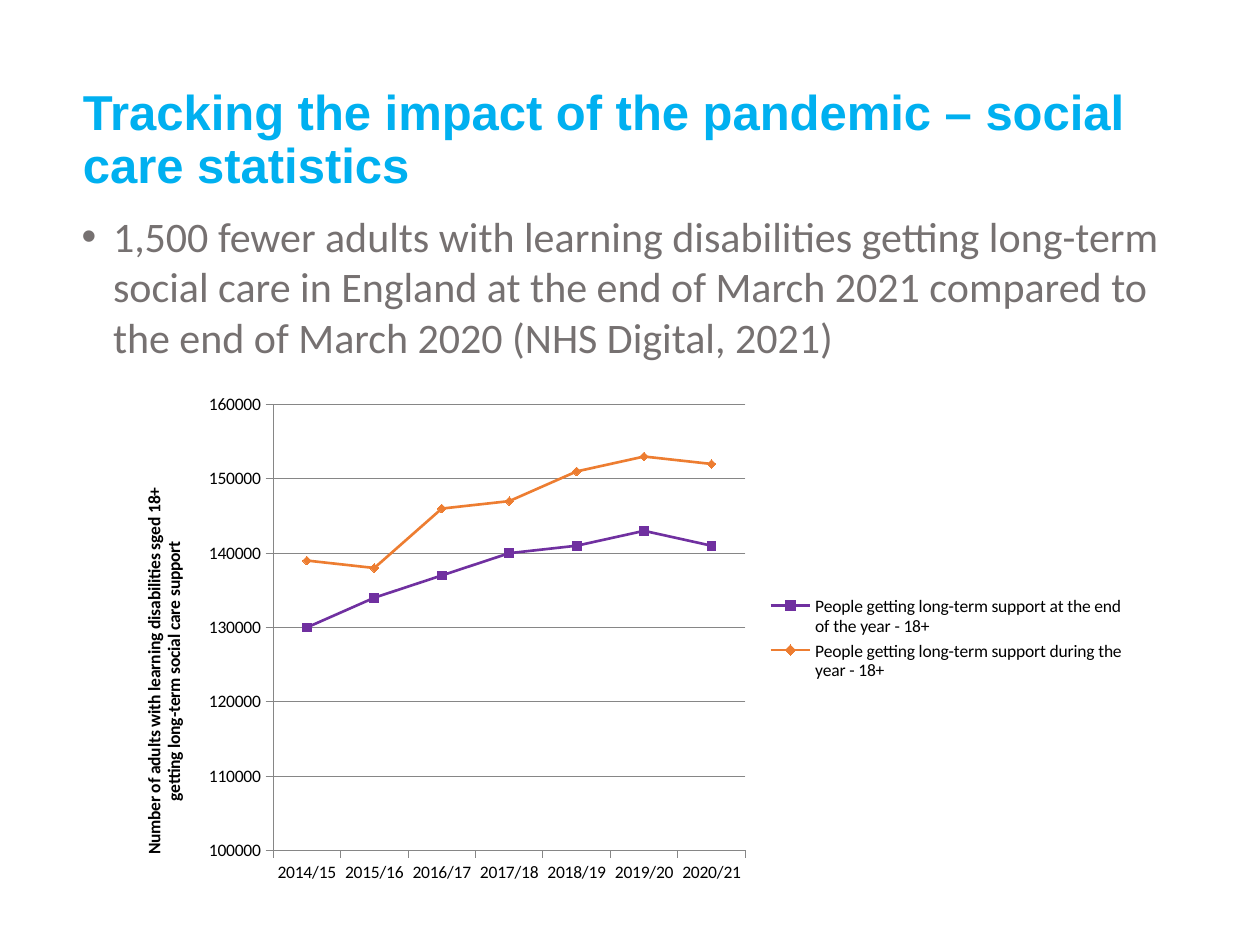
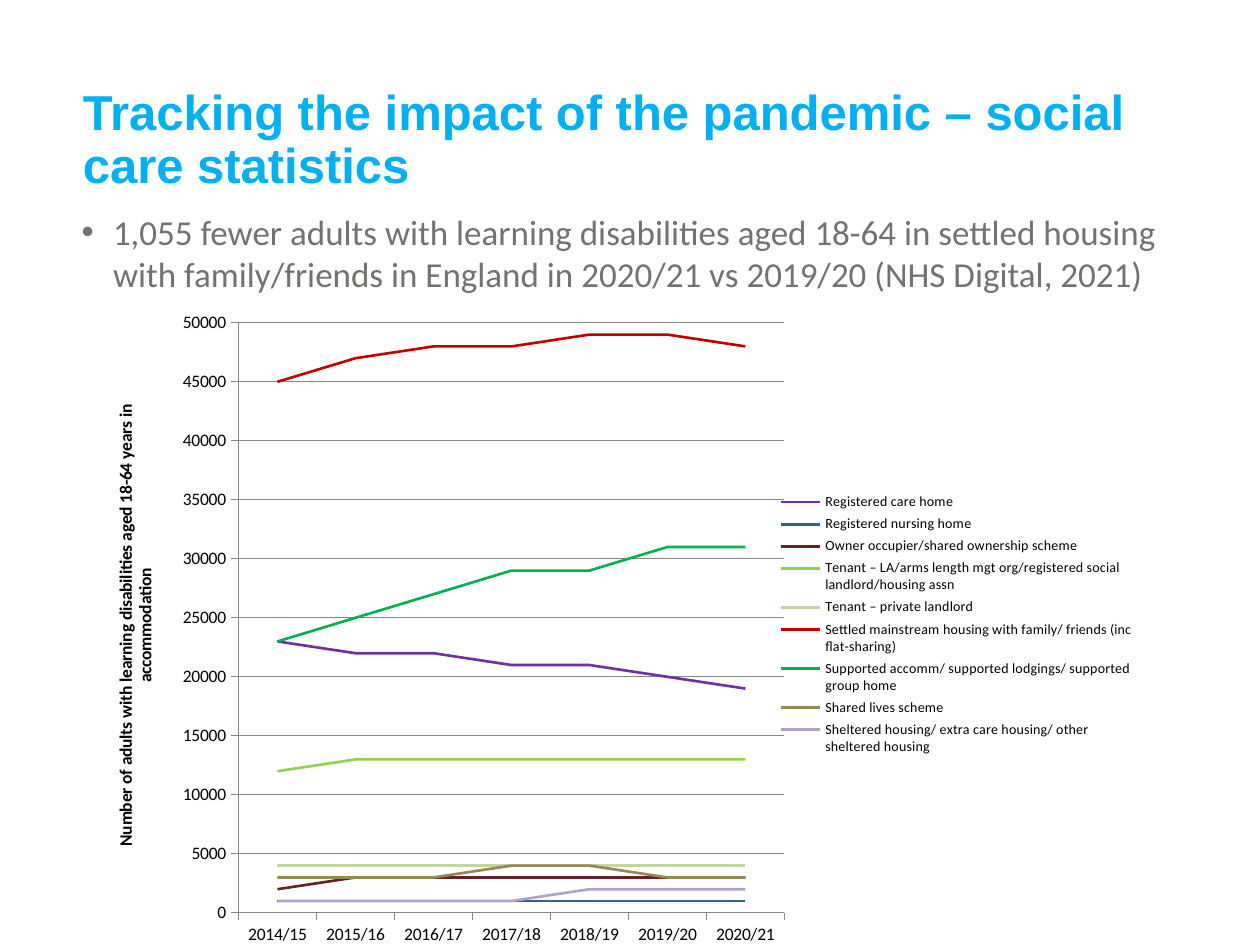
from dataclasses import dataclass

from lxml import etree
from pptx import Presentation
from pptx.chart.data import CategoryChartData
from pptx.dml.color import RGBColor
from pptx.enum.chart import XL_CHART_TYPE, XL_LEGEND_POSITION, XL_MARKER_STYLE, XL_TICK_MARK
from pptx.enum.text import MSO_ANCHOR
from pptx.oxml.ns import qn
from pptx.util import Pt

LINE = XL_CHART_TYPE.LINE
DOTS = XL_CHART_TYPE.LINE_MARKERS
RIGHT = XL_LEGEND_POSITION.RIGHT
MARKS = (XL_MARKER_STYLE.SQUARE, XL_MARKER_STYLE.DIAMOND)
OUT, NONE = XL_TICK_MARK.OUTSIDE, XL_TICK_MARK.NONE
MIDDLE, TOP = MSO_ANCHOR.MIDDLE, MSO_ANCHOR.TOP


@dataclass(frozen=True)
class Theme:
    head: str = "00B0F0"
    body: str = "767171"
    ink: str = "000000"
    grid: str = "868686"
    title: str = "Arial"
    text: str = "Calibri"
    large: float = 28
    label: float = 10
    dot: int = 5
    rule: float = 0.5
    trend: float = 1.5


THEME = Theme()
PAGE = (720, 540)
HEAD_BOX = (40.3, 28.6, 640.8, 104.4)
BODY_BOX = (39.5, 116.8, 648.7, 403.9)
TITLE = "Tracking the impact of the pandemic – social care statistics"
YEARS = ("2014/15", "2015/16", "2016/17", "2017/18", "2018/19", "2019/20", "2020/21")

SLIDES = (
    dict(
        point="1,500 fewer adults with learning disabilities getting long-term social care in England "
              "at the end of March 2021 compared to the end of March 2020 (NHS Digital, 2021)",
        size=24,
        kind=DOTS,
        box=(66.2, 219.6, 583.9, 290.9),
        plot=(89.9, 11.6, 269.8, 254.8),
        name="Number of adults with learning disabilities sged 18+ getting long-term social care support",
        spot=(13.5, 57.3),
        scale=(100000, 160000, 10000),
        key=10,
        lines=(
            ("People getting long-term support at the end of the year - 18+", "7030A0",
             (130000, 134000, 137000, 140000, 141000, 143000, 141000)),
            ("People getting long-term support during the year - 18+", "ED7D31",
             (139000, 138000, 146000, 147000, 151000, 153000, 152000)),
        ),
    ),
    dict(
        point="1,055 fewer adults with learning disabilities aged 18-64 in settled housing with "
              "family/friends in England in 2020/21 vs 2019/20 (NHS Digital, 2021)",
        size=20,
        kind=LINE,
        box=(54.7, 174.2, 601.2, 365.8),
        plot=(81.6, 10.3, 312, 337.6),
        name="Number of adults with learning disabilities aged 18-64 years in accommodation",
        spot=(8.6, 55.5),
        scale=(0, 50000, 5000),
        key=8,
        lines=(
            ("Registered care home", "7030A0",
             (23000, 22000, 22000, 21000, 21000, 20000, 19000)),
            ("Registered nursing home", "376092",
             (1000, 1000, 1000, 1000, 1000, 1000, 1000)),
            ("Owner occupier/shared ownership scheme", "632523",
             (2000, 3000, 3000, 3000, 3000, 3000, 3000)),
            ("Tenant – LA/arms length mgt org/registered social landlord/housing assn", "92D050",
             (12000, 13000, 13000, 13000, 13000, 13000, 13000)),
            ("Tenant – private landlord", "C3D69B",
             (4000, 4000, 4000, 4000, 4000, 4000, 4000)),
            ("Settled mainstream housing with family/ friends (inc flat-sharing)", "C00000",
             (45000, 47000, 48000, 48000, 49000, 49000, 48000)),
            ("Supported accomm/ supported lodgings/ supported group home", "00B050",
             (23000, 25000, 27000, 29000, 29000, 31000, 31000)),
            ("Shared lives scheme", "948A54",
             (3000, 3000, 3000, 4000, 4000, 3000, 3000)),
            ("Sheltered housing/ extra care housing/ other sheltered housing", "B3A2C7",
             (1000, 1000, 1000, 1000, 2000, 2000, 2000)),
        ),
    ),
)


def color(code):
    return RGBColor.from_string(code)


def style(font, face, size, code, bold=False):
    font.name, font.size, font.bold = face, Pt(size), bold
    font.color.rgb = color(code)


def write(slide, text, box, face, size, code, bold=False, anchor=TOP, space=1.0, bullet=None):
    frame = slide.shapes.add_textbox(*map(Pt, box)).text_frame
    frame.word_wrap = True
    frame.vertical_anchor = anchor
    para = frame.paragraphs[0]
    para.text = text
    para.line_spacing = space
    if bullet:
        props = para._p.get_or_add_pPr()
        props.set("marL", str(Pt(18)))
        props.set("indent", str(-Pt(18)))
        etree.SubElement(props, qn("a:buFont"), typeface="Arial")
        etree.SubElement(props, qn("a:buChar"), char=bullet)
    style(para.font, face, size, code, bold)


def place(node, index, spot, box, inner=False):
    layout = node.find(qn("c:layout"))
    if layout is None:
        layout = etree.Element(qn("c:layout"))
        node.insert(index, layout)
    manual = etree.SubElement(layout, qn("c:manualLayout"))
    rules = [("layoutTarget", "inner")] if inner else []
    rules += [("xMode", "edge"), ("yMode", "edge")]
    whole = box[2:] * 2
    rules += [(tag, round(part / full, 4)) for tag, part, full in zip("xywh", spot, whole)]
    for tag, value in rules:
        etree.SubElement(manual, qn("c:" + tag), val=str(value))


def draw(slide, spec):
    data = CategoryChartData(number_format="General")
    data.categories = YEARS
    for name, _, values in spec["lines"]:
        data.add_series(name, values)
    chart = slide.shapes.add_chart(spec["kind"], *map(Pt, spec["box"]), data).chart
    chart.has_title = False
    style(chart.font, THEME.text, THEME.label, THEME.ink)
    chart.plots[0].vary_by_categories = False

    chart.has_legend = True
    chart.legend.position = RIGHT
    chart.legend.include_in_layout = False
    style(chart.legend.font, THEME.text, spec["key"], THEME.ink)

    axis = chart.value_axis
    axis.minimum_scale, axis.maximum_scale, axis.major_unit = spec["scale"]
    axis.has_major_gridlines = True
    for rule in (axis.format, chart.category_axis.format, axis.major_gridlines.format):
        rule.line.color.rgb = color(THEME.grid)
        rule.line.width = Pt(THEME.rule)
    for side in (axis, chart.category_axis):
        side.major_tick_mark, side.minor_tick_mark = OUT, NONE
        style(side.tick_labels.font, THEME.text, THEME.label, THEME.ink)
    frame = axis.axis_title.text_frame
    frame.text = spec["name"]
    style(frame.paragraphs[0].runs[0].font, THEME.text, THEME.label, THEME.ink, True)

    area = chart.element.find(".//" + qn("c:plotArea"))
    label = area.find(qn("c:valAx") + "/" + qn("c:title"))
    turn = label.find(".//" + qn("a:bodyPr"))
    turn.set("rot", "-5400000")
    turn.set("vert", "horz")
    place(area, 0, spec["plot"], spec["box"], inner=True)
    place(label, 1, spec["spot"], spec["box"])

    for index, (line, (_, code, _)) in enumerate(zip(chart.plots[0].series, spec["lines"])):
        line.smooth = False
        line.format.line.color.rgb = color(code)
        line.format.line.width = Pt(THEME.trend)
        if spec["kind"] == DOTS:
            mark = line.marker
            mark.style, mark.size = MARKS[index], THEME.dot
            mark.format.fill.solid()
            mark.format.fill.fore_color.rgb = color(code)
            mark.format.line.color.rgb = color(code)


def main():
    deck = Presentation()
    deck.slide_width, deck.slide_height = map(Pt, PAGE)
    for spec in SLIDES:
        slide = deck.slides.add_slide(deck.slide_layouts[6])
        write(slide, TITLE, HEAD_BOX, THEME.title, THEME.large, THEME.head,
              bold=True, anchor=MIDDLE, space=0.9)
        write(slide, spec["point"], BODY_BOX, THEME.text, spec["size"], THEME.body, bullet="•")
        draw(slide, spec)
    deck.save("out.pptx")


if __name__ == "__main__":
    main()
